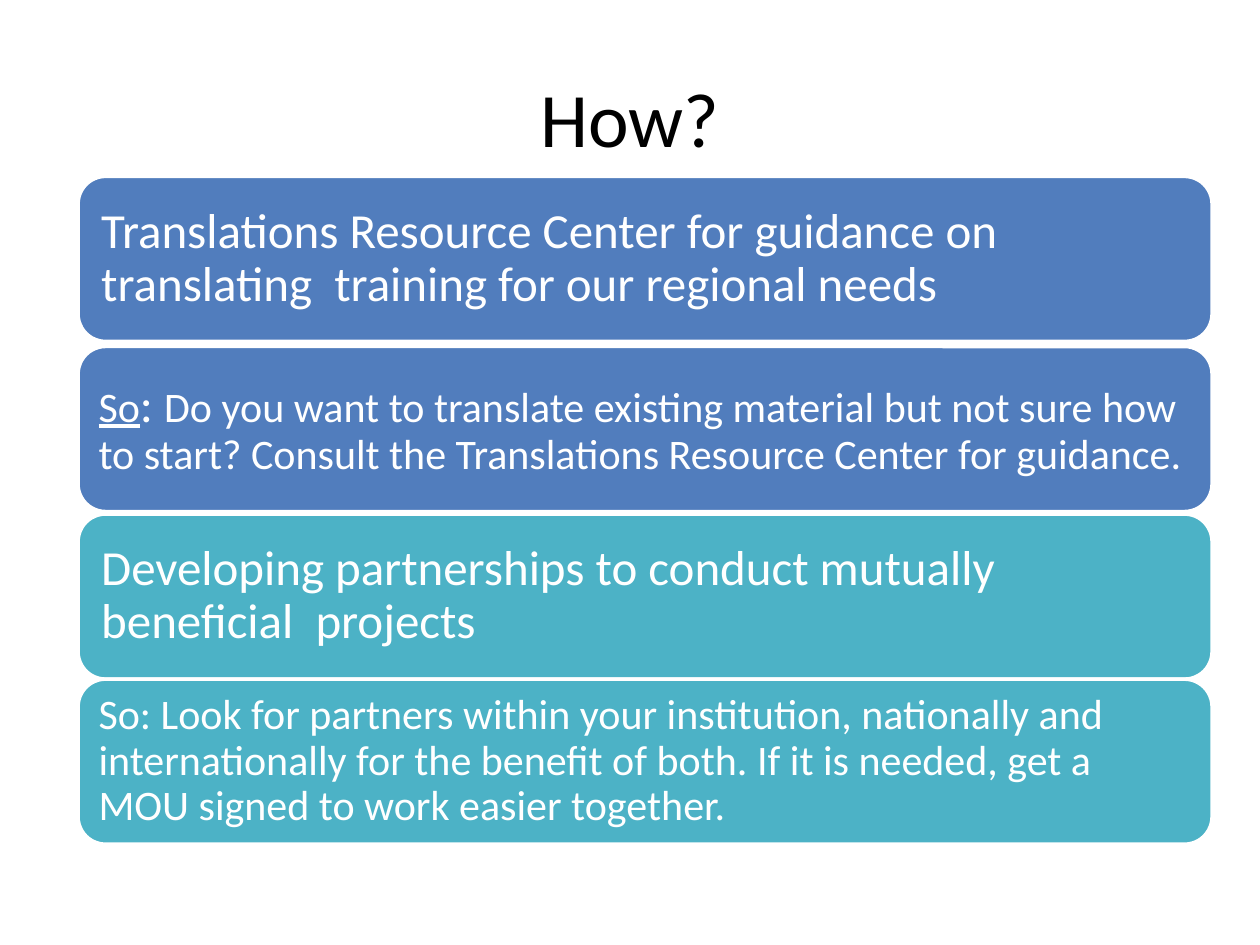
from pptx import Presentation
from pptx.dml.color import RGBColor
from pptx.enum.shapes import MSO_SHAPE
from pptx.enum.text import MSO_ANCHOR, PP_ALIGN
from pptx.util import Inches, Pt

ROUNDED = MSO_SHAPE.ROUNDED_RECTANGLE
MIDDLE = MSO_ANCHOR.MIDDLE
LEFT, CENTER = PP_ALIGN.LEFT, PP_ALIGN.CENTER

BLACK = RGBColor(0x00, 0x00, 0x00)
WHITE = RGBColor(0xFF, 0xFF, 0xFF)
BLUE = RGBColor(0x51, 0x7D, 0xBD)
TEAL = RGBColor(0x4C, 0xB2, 0xC6)

HEADING_INSET, ANSWER_INSET = 0.12, 0.1

PANELS = [
    (1.4, BLUE, HEADING_INSET, [
        ("Translations Resource Center for guidance on translating  training "
         "for our regional needs", 28, False)]),
    (2.75, BLUE, ANSWER_INSET, [
        ("So", 24, True),
        (": ", 28, False),
        ("Do you want to translate existing material but not sure how to start? "
         "Consult the Translations Resource Center for guidance.", 24, False)]),
    (4.08, TEAL, HEADING_INSET, [
        ("Developing partnerships to conduct mutually beneficial  projects", 28, False)]),
    (5.39, TEAL, ANSWER_INSET, [
        ("So: Look for partners within your institution, nationally and "
         "internationally for the benefit of both. If it is needed, get a MOU "
         "signed to work easier together.", 24, False)]),
]


def add_run(paragraph, text, size, color, underline=False):
    """Append one formatted run to the paragraph."""
    run = paragraph.add_run()
    run.text = text
    run.font.name = "Calibri"
    run.font.size = Pt(size)
    run.font.color.rgb = color
    if underline:
        run.font.underline = True


def add_title(slide, left, top, width, height, text):
    """Place the centred slide title in the given box."""
    box = slide.shapes.add_textbox(Inches(left), Inches(top), Inches(width), Inches(height))
    frame = box.text_frame
    frame.word_wrap = True
    frame.vertical_anchor = MIDDLE
    paragraph = frame.paragraphs[0]
    paragraph.alignment = CENTER
    add_run(paragraph, text, 44, BLACK)


def add_panel(slide, left, top, width, height, fill, inset, runs):
    """Place one rounded panel with its text in the given box."""
    panel = slide.shapes.add_shape(
        ROUNDED, Inches(left), Inches(top), Inches(width), Inches(height))
    panel.shadow.inherit = False
    panel.fill.solid()
    panel.fill.fore_color.rgb = fill
    panel.line.color.rgb = WHITE
    panel.line.width = Pt(2)
    frame = panel.text_frame
    frame.word_wrap = True
    frame.vertical_anchor = MIDDLE
    frame.margin_left = frame.margin_right = Inches(inset)
    frame.margin_top = frame.margin_bottom = Inches(inset)
    paragraph = frame.paragraphs[0]
    paragraph.alignment = LEFT
    paragraph.line_spacing = 0.9
    for text, size, underline in runs:
        add_run(paragraph, text, size, WHITE, underline)


def main():
    """Build and save the slide."""
    presentation = Presentation()
    presentation.slide_width = Inches(10)
    presentation.slide_height = Inches(7.5)
    slide = presentation.slides.add_slide(presentation.slide_layouts[6])
    add_title(slide, 0.5, 0.3, 9, 1.25, "How?")
    for top, fill, inset, runs in PANELS:
        add_panel(slide, 0.62, top, 9, 1.31, fill, inset, runs)
    presentation.save("out.pptx")


if __name__ == "__main__":
    main()
